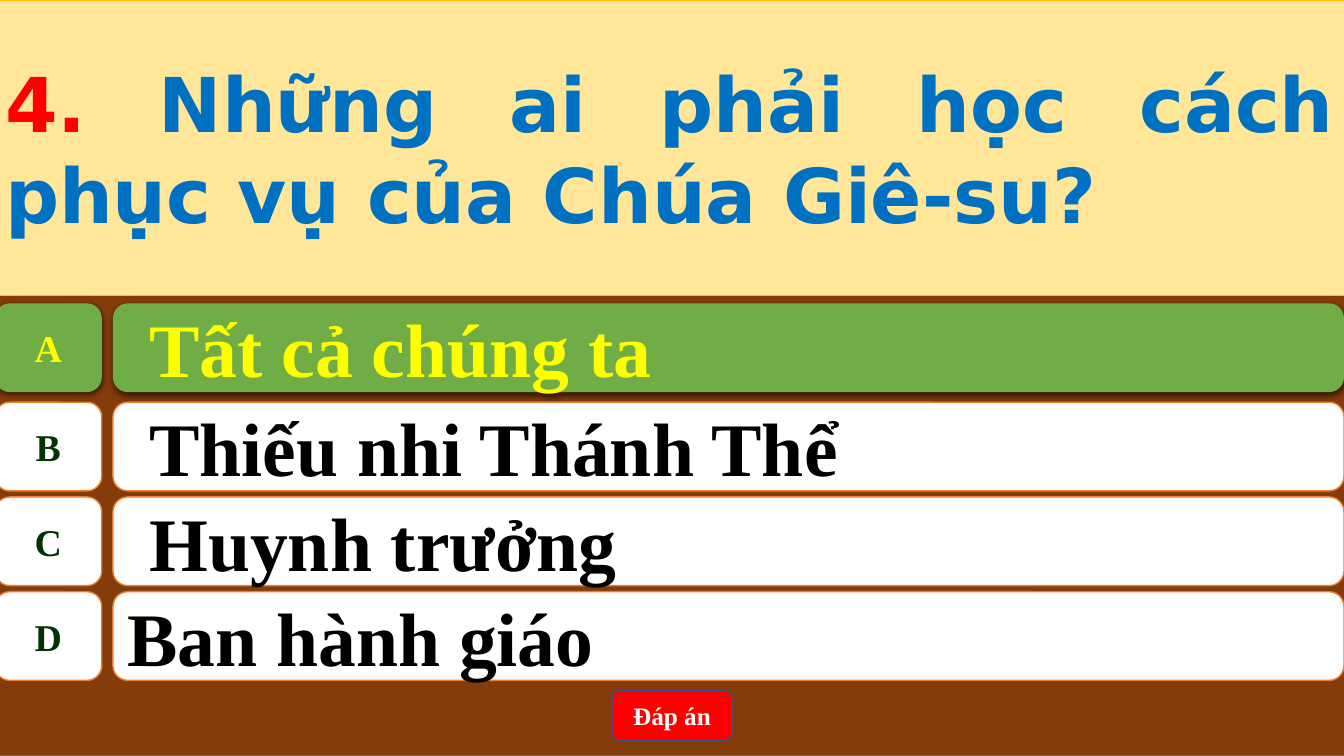
from lxml import etree
from pptx import Presentation, util as u
from pptx.dml import color
from pptx.enum import shapes, text
from pptx.oxml import ns

# Content
ASK = [("4. ", "mark"), ("Những ai phải học cách phục vụ của Chúa Giê-su?", "ask")]
ROWS = [  # letter, answer, indented, right answer
    ("A", "Tất cả chúng ta", True, True),
    ("B", "Thiếu nhi Thánh Thể", True, False),
    ("C", "Huynh trưởng", True, False),
    ("D", "Ban hành giáo", False, False),
]
KEY = "Đáp án"

THEME = dict(
    back="843C0B", rim="43739E", band="FFE699", gold="FFC000", mark="FF0000",
    ask="0070C0", card="FFFFFF", edge="ED7D31", letter="003300", ink="000000",
    right="70AD47", glow="FFFF00", key="FF0000", trim="325491", white="FFFFFF",
    sans="DejaVu Sans", serif="Times New Roman", big=54, mid=27, small=18,
)

# Grid, in inches
WIDE, HIGH = 13.33, 7.5
LEFT, FULL = -0.05, 13.39
BAND = 2.93
TAG, GAP = 1.06, 0.11
BAR = LEFT + TAG + GAP
TALL, STEP = 0.88, 0.94
FIRST, NEXT = 3.01, 3.99  # the right answer sits a little apart


def tint(name):
    return color.RGBColor.from_string(THEME[name])


def paint(shape, fill, line=None, width=1):
    shape.fill.solid()
    shape.fill.fore_color.rgb = tint(fill)
    if line:
        shape.line.color.rgb = tint(line)
        shape.line.width = u.Pt(width)
    else:
        shape.line.fill.background()


def add(kind, box, fill, line=None):
    shape = slide.shapes.add_shape(kind, *map(u.Inches, box))
    shape.shadow.inherit = False
    paint(shape, fill, line)
    return shape


def write(shape, runs, size, font, align, wrap=True):
    frame = shape.text_frame
    frame.word_wrap = wrap
    frame.auto_size = text.MSO_AUTO_SIZE.NONE
    frame.vertical_anchor = text.MSO_ANCHOR.MIDDLE
    para = frame.paragraphs[0]
    para.alignment = align
    for words, hue in runs:
        run = para.add_run()
        run.text = words
        run.font.name = THEME[font]
        run.font.size = u.Pt(THEME[size])
        run.font.bold = True
        run.font.color.rgb = tint(hue)
    return para


def shade(shape):
    list_ = shape._element.spPr.find(ns.qn("a:effectLst"))
    cast = etree.SubElement(list_, ns.qn("a:outerShdw"), blurRad=str(u.Pt(4.5)),
                            dist=str(u.Pt(1.5)), dir="5400000", algn="ctr", rotWithShape="0")
    hue = etree.SubElement(cast, ns.qn("a:srgbClr"), val=THEME["ink"])
    etree.SubElement(hue, ns.qn("a:alpha"), val="63000")


deck = Presentation()
deck.slide_width, deck.slide_height = u.Inches(WIDE), u.Inches(HIGH)
slide = deck.slides.add_slide(deck.slide_layouts[5])
KIND = shapes.MSO_SHAPE
ALIGN = text.PP_ALIGN

# Backdrop
add(KIND.RECTANGLE, (LEFT, 0, FULL, HIGH), "back", "rim")

# Question, raised above the backdrop
title = slide.shapes.title
title.left, title.top, title.width, title.height = map(u.Inches, (LEFT, 0, FULL, BAND))
paint(title, "band", "gold", 0.5)
write(title, ASK, "big", "sans", ALIGN.JUSTIFY)
slide.shapes._spTree.append(title._element)

# Answers
for i, (letter, answer, inset, right) in enumerate(ROWS):
    top = NEXT + (i - 1) * STEP if i else FIRST
    fill, line = ("right", None) if right else ("card", "edge")
    bar = add(KIND.ROUNDED_RECTANGLE, (BAR, top, WIDE - BAR, TALL), fill, line)
    para = write(bar, [(answer, "glow" if right else "ink")], "big", "serif", ALIGN.LEFT)
    if inset:
        para.level = 1
        props = para._p.get_or_add_pPr()
        props.set("marL", str(u.Inches(0.5)))
        props.set("indent", str(u.Inches(-0.28)))
    tag = add(KIND.FLOWCHART_ALTERNATE_PROCESS, (LEFT, top, TAG, TALL), fill, line)
    write(tag, [(letter, "glow" if right else "letter")], "mid", "serif", ALIGN.CENTER, False)
    if right:
        shade(bar)
        shade(tag)

# Answer button
key = add(KIND.ROUNDED_RECTANGLE, (6.07, 6.85, 1.19, 0.5), "key", "trim")
write(key, [(KEY, "white")], "small", "serif", ALIGN.CENTER)

deck.save("out.pptx")
